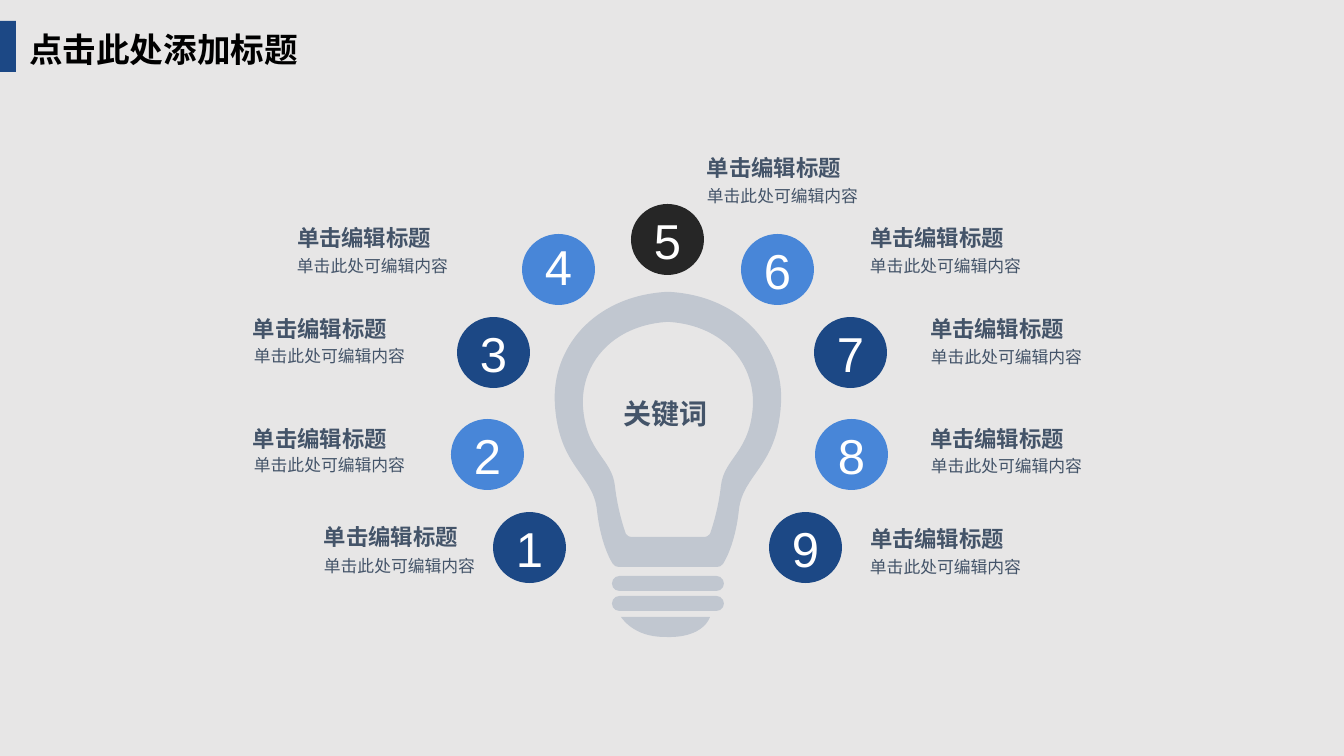
from pptx import Presentation, util as u
from pptx.dml.color import RGBColor
from pptx.enum import shapes, text
from pptx.oxml.ns import qn
from lxml import etree

TITLE = "点击此处添加标题"
KEYWORD = "关键词"
HEADING, BODY = "单击编辑标题", "单击此处可编辑内容"
COLORS = {"back": "E7E6E6", "navy": "1C4885", "blue": "4886D8", "black": "262626",
          "bulb": "C1C7D0", "slate": "445469", "title": "000000", "white": "FFFFFF"}
CJK = "Noto Sans CJK SC"

# number: (circle left, top), (heading left, top), (body left, top), circle colour
ITEMS = {
    1: ((493, 512), (324, 523), (324, 556), "navy"),
    2: ((451, 419), (253, 425), (254, 455), "blue"),
    3: ((457, 317), (253, 315), (254, 346), "navy"),
    4: ((522, 234), (297, 224), (297, 256), "blue"),
    5: ((631, 204), (707, 154), (707, 186), "black"),
    6: ((741, 234), (870, 224), (870, 256), "blue"),
    7: ((814, 317), (930, 315), (931, 347), "navy"),
    8: ((815, 419), (930, 425), (931, 456), "blue"),
    9: ((769, 512), (870, 525), (870, 557), "navy"),
}
CIRCLE = (73, 71)
LOWERED_4 = 13

# Each outline: start point, then three points (control, control, end) per curve.
AXIS = 668
GLASS_LEFT = [
    (665, 292),
    (593, 297), (551, 349), (555, 405),
    (559, 467), (593, 474), (597, 510),
    (601, 547), (613, 564), (613, 564),
    (614, 566), (617, 567), (619, 567)]
HOLLOW_LEFT = [
    (666, 322),
    (612, 326), (581, 364), (583, 406),
    (586, 453), (612, 458), (615, 486),
    (618, 513), (626, 534), (626, 534),
    (628, 536), (629, 537), (631, 537)]
TIP = [
    (621, 617),
    (710, 617), (710, 617), (710, 617),
    (710, 617), (704, 639), (664, 637),
    (633, 637), (621, 617), (621, 617)]
RINGS = [(612, 576, 112, 15), (612, 596, 112, 15)]

EMU_PER_PX = 914400 / 100.8


def px(*values):
    return [u.Emu(round(v * EMU_PER_PX)) for v in values]


def paint(sp, color):
    sp.fill.solid()
    sp.fill.fore_color.rgb = RGBColor.from_string(COLORS[color])
    sp.line.fill.background()
    sp.shadow.inherit = False


def write(sp, words, size, color="slate", font="Arial", bold=False,
          align="LEFT", anchor="TOP", margins=(0, 0, 0, 0), wrap=True, grow=True):
    tf = sp.text_frame
    tf.word_wrap = wrap
    tf.auto_size = text.MSO_AUTO_SIZE.SHAPE_TO_FIT_TEXT if grow else text.MSO_AUTO_SIZE.NONE
    tf.vertical_anchor = text.MSO_ANCHOR[anchor]
    tf.margin_left, tf.margin_top, tf.margin_right, tf.margin_bottom = px(*margins)
    p = tf.paragraphs[0]
    p.alignment = text.PP_ALIGN[align]
    p.line_spacing = 1.0
    p.space_before = u.Pt(0)
    r = p.add_run()
    r.text = words
    r.font.size, r.font.bold, r.font.name = u.Pt(size), bold, font
    r.font.color.rgb = RGBColor.from_string(COLORS[color])
    etree.SubElement(r.font._element, qn("a:ea")).set("typeface", CJK)


def add_shape(s, kind, box, color):
    sp = s.shapes.add_shape(shapes.MSO_SHAPE[kind], *px(*box))
    paint(sp, color)
    return sp


def add_text(s, box, words, size, **fmt):
    write(s.shapes.add_textbox(*px(*box)), words, size, **fmt)


def mirrored(left):
    """Join a left half to its mirror image by a straight curve at the bottom."""
    right = [(2 * AXIS - x, y) for x, y in reversed(left)]
    return left + [left[-1], right[0]] + right


def add_outline(s, contours, color):
    """Draw closed contours, turning each three points into one cubic curve."""
    first, *holes = contours
    builder = s.shapes.build_freeform(*px(*first[0]), scale=1.0)
    builder.add_line_segments([px(*pt) for pt in first[1:]], close=True)
    for hole in holes:
        builder.move_to(*px(*hole[0]))
        builder.add_line_segments([px(*pt) for pt in hole[1:]], close=True)
    sp = builder.convert_to_shape()
    lines = list(sp._element.iter(qn("a:lnTo")))
    for i in range(0, len(lines), 3):
        curve = etree.Element(qn("a:cubicBezTo"))
        lines[i].addprevious(curve)
        for line in lines[i:i + 3]:
            curve.append(line[0])
            line.getparent().remove(line)
    paint(sp, color)


def main():
    prs = Presentation()
    prs.slide_width, prs.slide_height = px(1344, 756)
    s = prs.slides.add_slide(prs.slide_layouts[5])
    s.background.fill.solid()
    s.background.fill.fore_color.rgb = RGBColor.from_string(COLORS["back"])

    title = s.shapes.title
    title.left, title.top, title.width, title.height = px(19, 24, 291, 51)
    write(title, TITLE, 24, color="title", font=CJK, bold=True,
          margins=(10, 5, 10, 5), wrap=False)
    add_shape(s, "RECTANGLE", (0, 21, 16, 51), "navy")

    for box in RINGS:
        add_shape(s, "ROUNDED_RECTANGLE", box, "bulb").adjustments[0] = 0.5
    add_outline(s, [TIP], "bulb")
    add_outline(s, [mirrored(GLASS_LEFT), mirrored(HOLLOW_LEFT)], "bulb")
    add_text(s, (590, 396, 151, 34), KEYWORD, 20, bold=True, align="CENTER")

    for number, (spot, heading, body, color) in ITEMS.items():
        circle = add_shape(s, "OVAL", (*spot, *CIRCLE), color)
        bottom = LOWERED_4 if number == 4 else 5
        write(circle, str(number), 35, color="white", align="CENTER", anchor="MIDDLE",
              margins=(10, 5, 10, bottom), grow=False)
        add_text(s, (*heading, 216, 27), HEADING, 16, bold=True)
        add_text(s, (*body, 257, 20), BODY, 12)

    prs.save("out.pptx")


if __name__ == "__main__":
    main()
